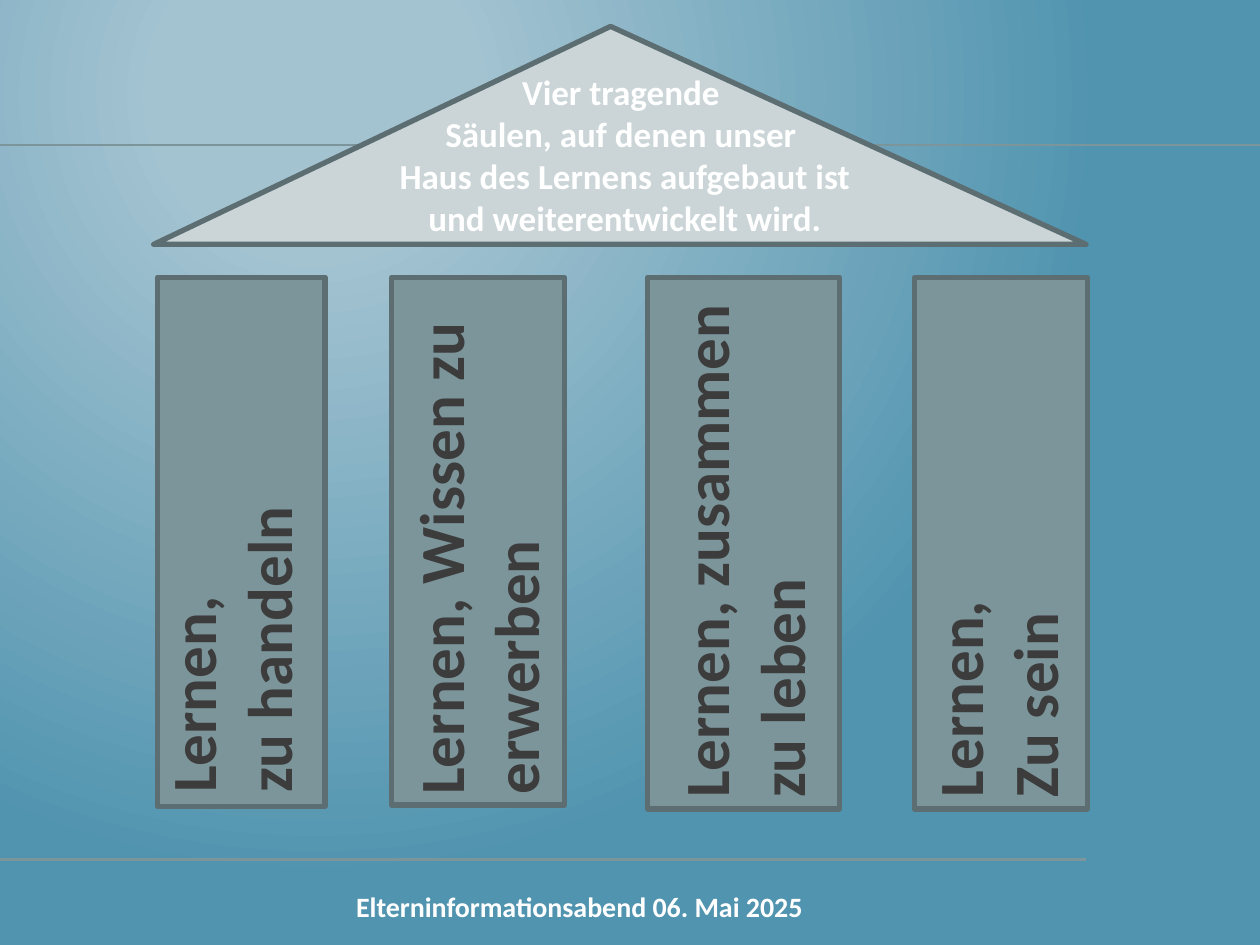
from lxml import etree
from pptx import Presentation
from pptx.dml.color import RGBColor
from pptx.enum import shapes, text
from pptx.oxml.ns import qn
from pptx.util import Inches, Pt

SKY = RGBColor(0xA3, 0xC3, 0xD1)
BLUE = RGBColor(0x51, 0x94, 0xAF)
STONE = RGBColor(0x7C, 0x95, 0x9A)
EDGE = RGBColor(0x5C, 0x6E, 0x72)
ROOF = RGBColor(0xCB, 0xD5, 0xD7)
DARK = RGBColor(0x3C, 0x3C, 0x3C)
WHITE = RGBColor(0xFF, 0xFF, 0xFF)

prs = Presentation()
prs.slide_width, prs.slide_height = Inches(10), Inches(7.5)
s = prs.slides.add_slide(prs.slide_layouts[6])


def add_block(kind, box, color):
    sp = s.shapes.add_shape(kind, *map(Inches, box))
    sp.shadow.inherit = False
    sp.fill.solid()
    sp.fill.fore_color.rgb = color
    sp.line.color.rgb = EDGE
    sp.line.width = Pt(3)
    return sp


def add_label(box, lines, size, color, align, rotation=0):
    sp = s.shapes.add_textbox(*map(Inches, box))
    sp.rotation = rotation
    tf = sp.text_frame
    tf.word_wrap = True
    tf.auto_size = text.MSO_AUTO_SIZE.SHAPE_TO_FIT_TEXT
    tf.text = "\n".join(lines)
    for p in tf.paragraphs:
        p.alignment = align
        for r in p.runs:
            r.font.name = "Calibri"
            r.font.size = Pt(size)
            r.font.bold = True
            r.font.color.rgb = color


# Background: radial gradient
fill = s.background.fill
fill.gradient()
for stop, color, position in zip(fill.gradient_stops, (SKY, BLUE), (0.2, 1)):
    stop.color.rgb = color
    stop.position = position
lin = next(s.background._cSld.iter(qn("a:lin")))
radial = etree.Element(qn("a:path"), path="circle")
etree.SubElement(radial, qn("a:fillToRect"), l="50000", t="20000", r="100000", b="100000")
lin.getparent().replace(lin, radial)

# Footer and rules
add_label((0.98, 7.01, 7.24, 0.64), ["Elterninformationsabend 06. Mai 2025"],
          16, WHITE, text.PP_ALIGN.CENTER)
for y, right, width in ((6.82, 8.62, 1.5), (1.15, 10, 0.75)):
    rule = s.shapes.add_connector(shapes.MSO_CONNECTOR.STRAIGHT,
                                  0, Inches(y), Inches(right), Inches(y))
    rule.line.color.rgb = STONE
    rule.line.width = Pt(width)
    etree.SubElement(rule._element.spPr, qn("a:effectLst"))

# Roof
roof = add_block(shapes.MSO_SHAPE.ISOSCELES_TRIANGLE, (1.22, 0.21, 7.4, 1.73), ROOF)
roof.adjustments[0] = 0.49
add_label((3.01, 0.51, 3.9, 1.45),
          ["Vier tragende ", "Säulen, auf denen unser ",
           "Haus des Lernens aufgebaut ist und weiterentwickelt wird."],
          20, WHITE, text.PP_ALIGN.CENTER)

# Pillars: left, width, height, then label left, top, length and lines
PILLARS = [
    (1.25, 1.33, 4.2, -0.14, 3.77, 3.93, ["Lernen,", "zu handeln"]),
    (3.11, 1.37, 4.19, 1.82, 3.78, 3.94, ["Lernen, Wissen zu erwerben"]),
    (5.14, 1.52, 4.22, 3.73, 3.61, 4.33, ["Lernen, zusammen zu leben"]),
    (7.26, 1.37, 4.22, 6.06, 3.92, 3.7, ["Lernen,", "Zu sein"]),
]
for left, width, height, label_left, label_top, length, lines in PILLARS:
    add_block(shapes.MSO_SHAPE.RECTANGLE, (left, 2.2, width, height), STONE)
    add_label((label_left, label_top, length, 1.31), lines,
              36, DARK, text.PP_ALIGN.LEFT, rotation=270)

prs.save("out.pptx")
